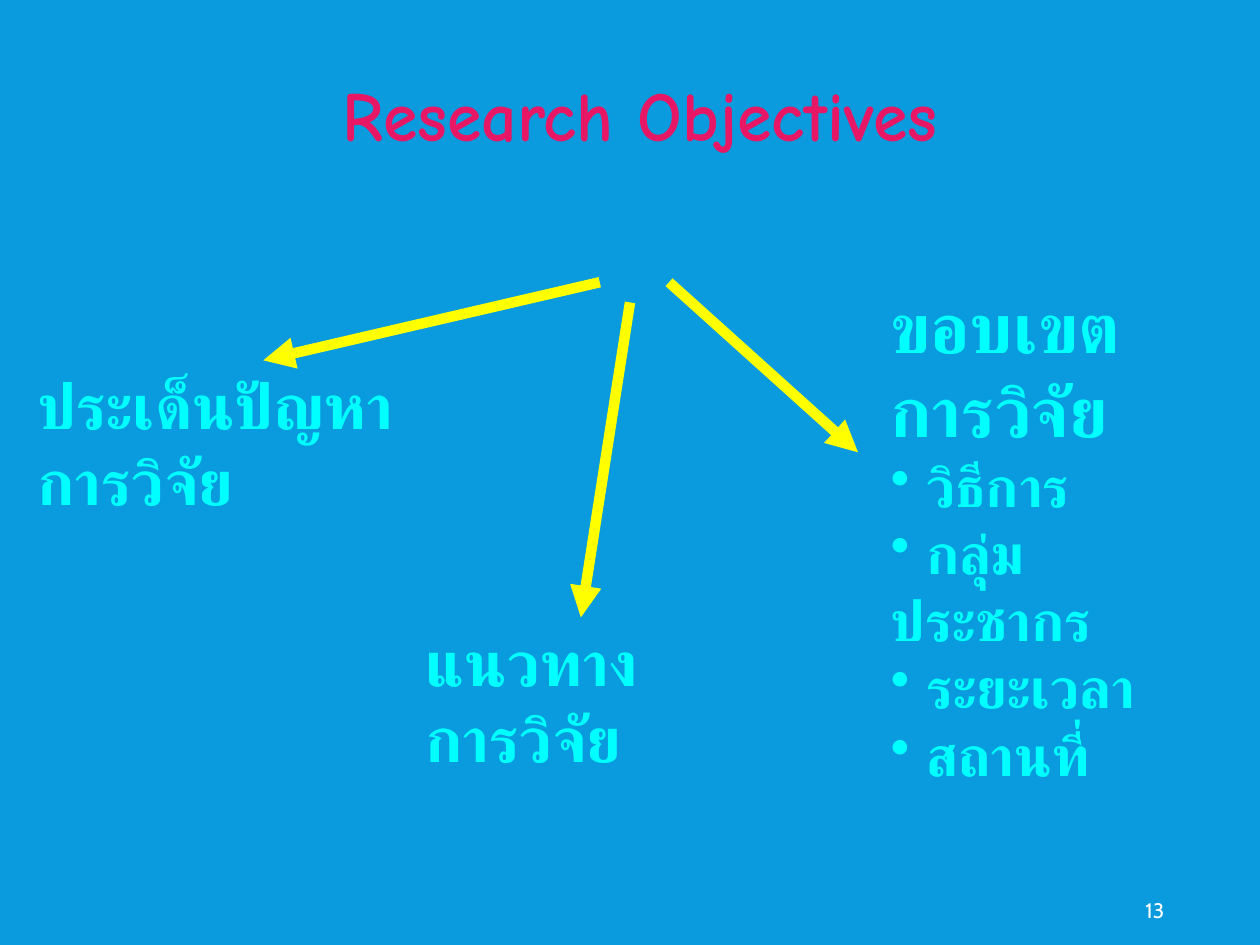
from lxml import etree
from pptx import Presentation
from pptx import util as u
from pptx.dml.color import RGBColor
from pptx.enum import shapes, text
from pptx.oxml.ns import qn

WIDTH, HEIGHT = 10, 7.5
BLUE, PINK, CYAN, YELLOW, WHITE = "099BDD", "E81766", "00FFFF", "FFFF00", "FFFFFF"

TOPICS = [
    ((0.2, 2.86, 3.39, 0.7), "ประเด็นปัญหาการวิจัย", 36, []),
    ((3.28, 4.9, 2.51, 0.7), "แนวทางการวิจัย", 36, []),
    ((6.97, 2.2, 2.77, 2.9), "ขอบเขตการวิจัย", 40,
     ["วิธีการ", "กลุ่มประชากร", "ระยะเวลา", "สถานที่"]),
]
ARROWS = [
    ((4.76, 2.24), (2.09, 2.86)),
    ((5, 2.4), (4.61, 4.9)),
    ((5.31, 2.24), (6.81, 3.59)),
]


def color(value):
    return RGBColor.from_string(value)


def add_box(slide, area):
    frame = slide.shapes.add_textbox(*map(u.Inches, area)).text_frame
    frame.word_wrap = True
    return frame


def write(paragraph, words, size, fill, font="Cabin", bold=True):
    paragraph.text = words
    paragraph.font.size = u.Pt(size)
    paragraph.font.name = font
    paragraph.font.bold = bold
    paragraph.font.color.rgb = color(fill)


def add_bullet(paragraph):
    properties = paragraph._p.get_or_add_pPr()
    properties.set("marL", "0")
    properties.set("indent", "0")
    bullet = etree.Element(qn("a:buChar"), char="•")
    properties.insert(0, bullet)


def add_title(slide):
    paragraph = add_box(slide, (2.48, 0.52, 5.2, 1.72)).paragraphs[0]
    write(paragraph, "Research Objectives", 40, PINK, "Comic Neue")
    paragraph.alignment = text.PP_ALIGN.CENTER


def add_topic(slide, area, heading, size, items):
    frame = add_box(slide, area)
    frame.auto_size = text.MSO_AUTO_SIZE.SHAPE_TO_FIT_TEXT
    write(frame.paragraphs[0], heading, size, CYAN)
    for item in items:
        paragraph = frame.add_paragraph()
        add_bullet(paragraph)
        write(paragraph, " " + item, 32, CYAN)


def add_arrow(slide, start, end):
    arrow = slide.shapes.add_connector(
        shapes.MSO_CONNECTOR.STRAIGHT, *map(u.Inches, start + end))
    arrow.line.color.rgb = color(YELLOW)
    arrow.line.width = u.Pt(6)
    etree.SubElement(arrow.line._get_or_add_ln(), qn("a:tailEnd"), type="triangle")
    etree.SubElement(arrow._element.spPr, qn("a:effectLst"))


def add_page_number(slide):
    frame = add_box(slide, (9.04, 7.02, 0.78, 0.4))
    frame.margin_left = u.Inches(0.05)
    frame.vertical_anchor = text.MSO_ANCHOR.MIDDLE
    write(frame.paragraphs[0], "13", 12, WHITE, bold=False)


def main():
    presentation = Presentation()
    presentation.slide_width = u.Inches(WIDTH)
    presentation.slide_height = u.Inches(HEIGHT)
    slide = presentation.slides.add_slide(presentation.slide_layouts[6])
    slide.background.fill.solid()
    slide.background.fill.fore_color.rgb = color(BLUE)
    add_page_number(slide)
    add_title(slide)
    for topic in TOPICS:
        add_topic(slide, *topic)
    for start, end in ARROWS:
        add_arrow(slide, start, end)
    presentation.save("out.pptx")


if __name__ == "__main__":
    main()
